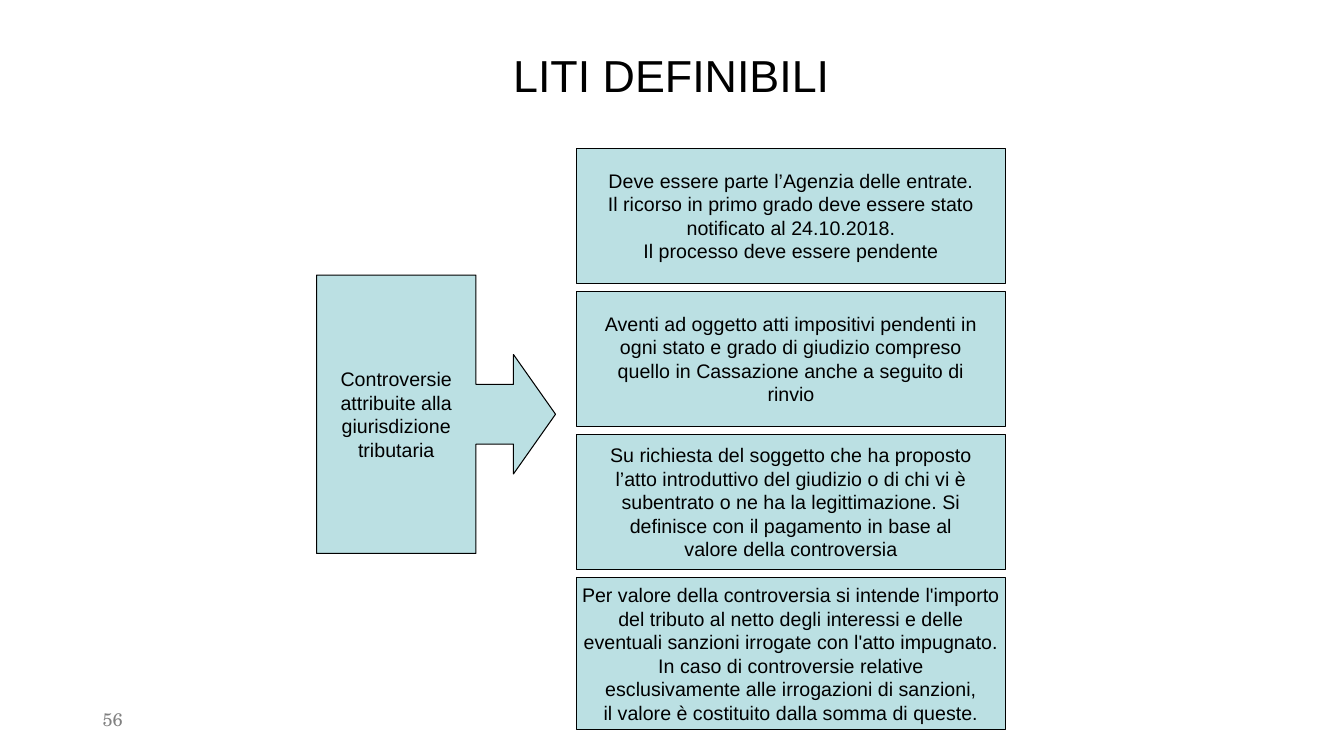
from pptx import Presentation
from pptx.dml.color import RGBColor
from pptx.enum.shapes import MSO_SHAPE
from pptx.enum.text import MSO_ANCHOR, PP_ALIGN
from pptx.util import Inches, Pt

TITLE = "LITI DEFINIBILI"
NUMBER = "56"
SOURCE = ["Controversie", "attribuite alla", "giurisdizione", "tributaria"]
RULES = [
    ["Deve essere parte l’Agenzia delle entrate.",
     "Il ricorso in primo grado deve essere stato",
     "notificato al 24.10.2018.",
     "Il processo deve essere pendente"],
    ["Aventi ad oggetto atti impositivi pendenti in",
     "ogni stato e grado di giudizio compreso",
     "quello in Cassazione anche a seguito di",
     "rinvio"],
    ["Su richiesta del soggetto che ha proposto",
     "l’atto introduttivo del giudizio o di chi vi è",
     "subentrato o ne ha la legittimazione. Si",
     "definisce con il pagamento in base al",
     "valore della controversia"],
    ["Per valore della controversia si intende l'importo",
     "del tributo al netto degli interessi e delle",
     "eventuali sanzioni irrogate con l'atto impugnato.",
     "In caso di controversie relative",
     "esclusivamente alle irrogazioni di sanzioni,",
     "il valore è costituito dalla somma di queste."],
]
HEIGHTS = [1.34, 1.34, 1.34, 1.51]
TOP, GAP = 1.47, 0.08

BLACK = RGBColor(0x00, 0x00, 0x00)
GRAY = RGBColor(0x80, 0x80, 0x80)
AQUA = RGBColor(0xBB, 0xE0, 0xE3)
CENTER, LEFT = PP_ALIGN.CENTER, PP_ALIGN.LEFT
MIDDLE = MSO_ANCHOR.MIDDLE
RECT = MSO_SHAPE.RECTANGLE
CALLOUT = MSO_SHAPE.RIGHT_ARROW_CALLOUT


def write(shape, lines, size, font="Arial", color=BLACK, align=CENTER,
          wrap=False, spacing=None):
    frame = shape.text_frame
    frame.word_wrap = wrap
    frame.vertical_anchor = MIDDLE
    frame.text = "\n".join(lines)
    for para in frame.paragraphs:
        para.alignment = align
        para.line_spacing = spacing
        para.font.size = Pt(size)
        para.font.name = font
        para.font.color.rgb = color


def add_box(slide, kind, area, lines):
    box = slide.shapes.add_shape(kind, *map(Inches, area))
    box.shadow.inherit = False
    box.fill.solid()
    box.fill.fore_color.rgb = AQUA
    box.line.color.rgb = BLACK
    box.line.width = Pt(0.75)
    write(box, lines, 14)
    return box


def main():
    deck = Presentation()
    deck.slide_width, deck.slide_height = Inches(13.33), Inches(7.5)
    slide = deck.slides.add_slide(deck.slide_layouts[6])

    title = slide.shapes.add_textbox(*map(Inches, (0.91, 0.05, 11.5, 1.45)))
    write(title, [TITLE], 32, wrap=True, spacing=0.9)
    number = slide.shapes.add_textbox(*map(Inches, (0.92, 6.95, 3, 0.4)))
    write(number, [NUMBER], 13, "TeX Gyre Schola", GRAY, LEFT, True, 0.93)

    callout = add_box(slide, CALLOUT, (3.14, 2.73, 2.37, 2.76), SOURCE)
    for i, value in enumerate((0.25, 0.25, 0.176, 0.667)):
        callout.adjustments[i] = value

    top = TOP
    for lines, height in zip(RULES, HEIGHTS):
        add_box(slide, RECT, (5.72, top, 4.25, height), lines)
        top += height + GAP

    deck.save("out.pptx")


if __name__ == "__main__":
    main()
